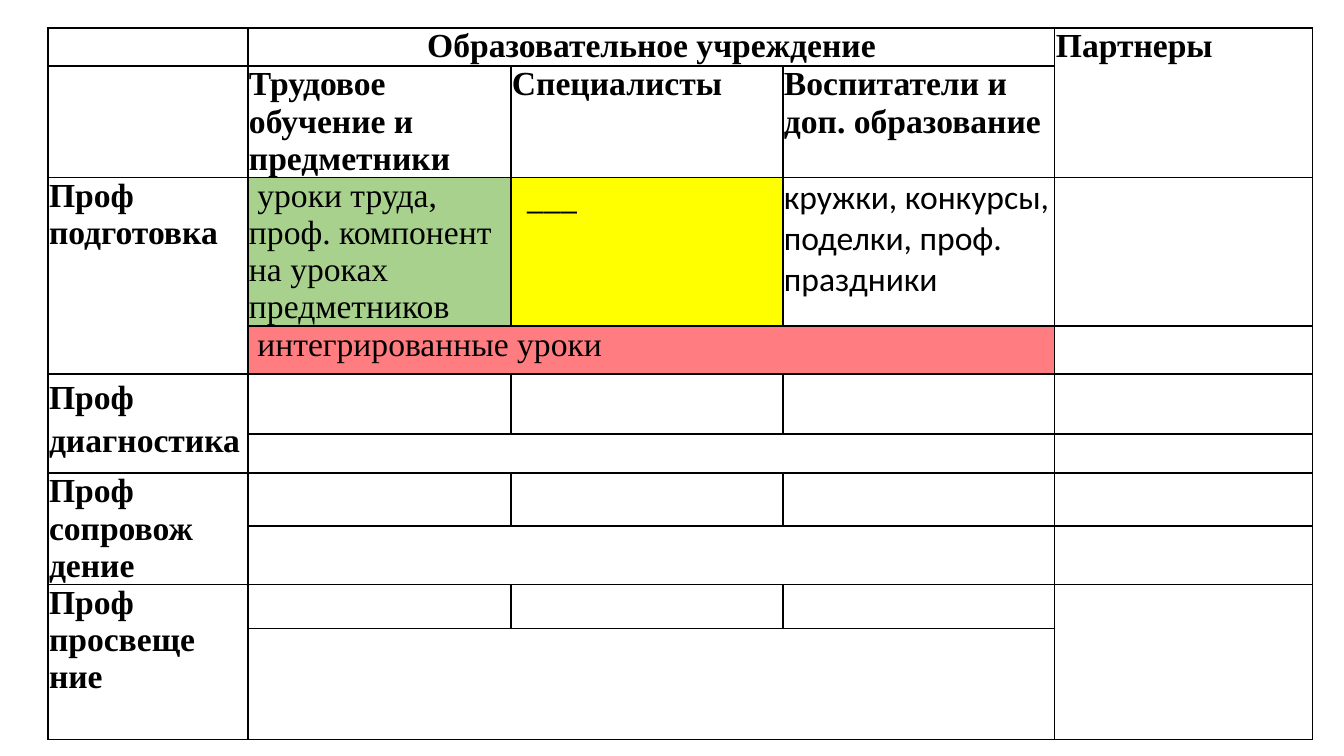
from lxml import etree
from pptx import Presentation
from pptx.dml.color import RGBColor as Rgb
from pptx.enum.text import PP_ALIGN as Align
from pptx.oxml import parse_xml
from pptx.oxml.ns import nsdecls
from pptx.util import Pt

# Content: lengths in px
PX = 914400 / 100.8
LEFT, TOP = 48, 28
COLS = [200, 263, 272, 272, 258]
ROWS = [38, 111, 148, 48, 60, 39, 53, 58, 44, 111]
SERIF, SANS = "Times New Roman", "Calibri"

# Merged blocks: row, column, rows down, columns across
SPANS = [
    (0, 1, 1, 3), (0, 4, 2, 1), (8, 4, 2, 1),
    *[(row, 0, 2, 1) for row in (2, 4, 6, 8)],
    *[(row, 1, 1, 3) for row in (3, 5, 7, 9)],
]

# Texts by row and column: lines, font, bold
TEXTS = {
    (0, 1): (["Образовательное учреждение"], SERIF, True),
    (0, 4): (["Партнеры"], SERIF, True),
    (1, 1): (["Трудовое обучение и предметники"], SERIF, True),
    (1, 2): (["Специалисты"], SERIF, True),
    (1, 3): (["Воспитатели и доп. образование"], SERIF, True),
    (2, 0): (["Проф подготовка"], SERIF, True),
    (2, 1): ([" уроки труда, проф. компонент на уроках предметников"],
             SERIF, False),
    (2, 2): (["___"], SANS, False),
    (2, 3): (["кружки, конкурсы, поделки, проф. праздники"], SANS, False),
    (3, 1): ([" интегрированные уроки"], SERIF, False),
    (4, 0): (["Проф диагностика"], SERIF, True),
    (6, 0): (["Проф сопровож", "дение"], SERIF, True),
    (8, 0): (["Проф просвеще", "ние"], SERIF, True),
}
FILLS = {
    (2, 1): "A9D18E", (2, 2): "FFFF00", (3, 1): "FF7C80",
    (4, 0): "FFFFFF", (6, 0): "FFFFFF", (8, 0): "FFFFFF",
}


def px(n):
    return round(n * PX)


def color(code):
    return Rgb.from_string(code)


def border(cell):
    props = cell._tc.get_or_add_tcPr()
    for side in ("lnL", "lnR", "lnT", "lnB"):
        line = parse_xml(f'<a:{side} {nsdecls("a")} w="{Pt(1)}"/>')
        fill = etree.SubElement(line, line.tag.replace(side, "solidFill"))
        etree.SubElement(fill, line.tag.replace(side, "srgbClr"), val="000000")
        props.append(line)


def write(cell, lines, face, bold):
    cell.text = "\n".join(lines)
    for para in cell.text_frame.paragraphs:
        font = para.font
        font.name, font.size, font.bold = face, Pt(24), bold
        font.color.rgb = color("000000")


# Slide and table
deck = Presentation()
deck.slide_width, deck.slide_height = px(1344), px(756)
slide = deck.slides.add_slide(deck.slide_layouts[6])
table = slide.shapes.add_table(
    len(ROWS), len(COLS), px(LEFT), px(TOP), px(sum(COLS)), px(sum(ROWS))
).table
table.first_row = table.horz_banding = False
for col, width in zip(table.columns, COLS):
    col.width = px(width)
for row, height in zip(table.rows, ROWS):
    row.height = px(height)

# Cells
for r in range(len(ROWS)):
    for c in range(len(COLS)):
        cell = table.cell(r, c)
        cell.margin_left = cell.margin_right = px(1)
        cell.margin_top = cell.margin_bottom = 0
        border(cell)
        if (r, c) in FILLS:
            cell.fill.solid()
            cell.fill.fore_color.rgb = color(FILLS[r, c])
        else:
            cell.fill.background()
        if (r, c) in TEXTS:
            write(cell, *TEXTS[r, c])

# Merges and special spacing
for r, c, down, across in SPANS:
    table.cell(r, c).merge(table.cell(r + down - 1, c + across - 1))
table.cell(0, 1).text_frame.paragraphs[0].alignment = Align.CENTER
table.cell(4, 0).text_frame.paragraphs[0].line_spacing = 1.15
table.cell(2, 2).margin_left = px(16)

deck.save("out.pptx")
